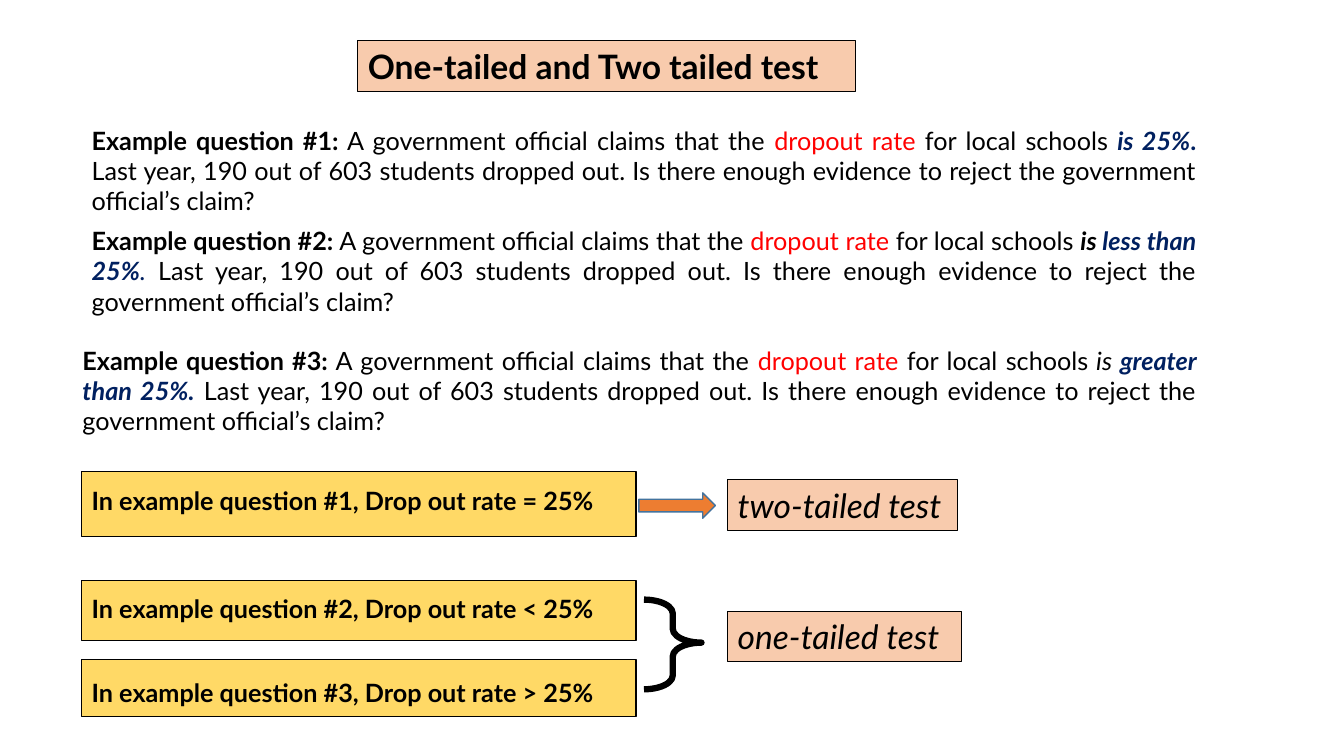
from pptx import Presentation
from pptx import util as u
from pptx.dml.color import RGBColor
from pptx.enum import shapes, text

BLACK, RED, NAVY = "000000", "FF0000", "002060"
YELLOW, PEACH, ORANGE, BLUE = "FFD966", "F8CBAD", "ED7D31", "43739E"


def rgb(value):
    return RGBColor.from_string(value)


class Deck:
    font = "Lato"

    def __init__(self, width, height):
        self.prs = Presentation()
        self.prs.slide_width, self.prs.slide_height = u.Cm(width), u.Cm(height)
        self.s = self.prs.slides.add_slide(self.prs.slide_layouts[6])

    def add_text(self, sp, runs, size, align=text.PP_ALIGN.LEFT, top=0.13):
        tf = sp.text_frame
        frame = dict(word_wrap=True, vertical_anchor=text.MSO_ANCHOR.TOP,
                     margin_top=u.Cm(top), margin_right=u.Cm(0.25))
        for name, value in frame.items():
            setattr(tf, name, value)
        p = tf.paragraphs[0]
        p.alignment = align
        for words, color, style in runs:
            r = p.add_run()
            r.text = words
            values = dict(name=self.font, size=u.Pt(size),
                          bold="b" in style, italic="i" in style)
            for name, value in values.items():
                setattr(r.font, name, value)
            r.font.color.rgb = rgb(color)

    def paragraph(self, box, runs):
        sp = self.s.shapes.add_textbox(*map(u.Cm, box))
        self.add_text(sp, runs, 18, text.PP_ALIGN.JUSTIFY)

    def shape(self, kind, box, fill=None, line=BLACK, width=0.75):
        sp = self.s.shapes.add_shape(kind, *map(u.Cm, box))
        sp.shadow.inherit = False
        if fill:
            sp.fill.solid()
            sp.fill.fore_color.rgb = rgb(fill)
        else:
            sp.fill.background()
        sp.line.color.rgb = rgb(line)
        sp.line.width = u.Pt(width)
        return sp

    def label(self, box, words, fill, size, style, top=0.13):
        sp = self.shape(shapes.MSO_SHAPE.RECTANGLE, box, fill)
        self.add_text(sp, [(words, BLACK, style)], size, top=top)


def main():
    deck = Deck(33.87, 19.05)

    # Title
    deck.label((9.02, 1.02, 12.55, 1.28), "One-tailed and Two tailed test", PEACH, 24, "b")

    # Example questions: each differs only in its claim
    question = ("Last year, 190 out of 603 students dropped out. Is there enough "
                "evidence to reject the government official’s claim?")
    examples = [
        (2.06, 3.02, [(" ", BLACK, ""), ("is 25%", NAVY, "bi"), (". ", NAVY, "b")], ""),
        (2.06, 5.55, [(" ", BLACK, ""), ("is ", BLACK, "bi"),
                      ("less than 25%", NAVY, "bi"), (".", NAVY, "i")], " "),
        (1.83, 8.56, [(" is ", BLACK, "i"), ("greater than 25%.", NAVY, "bi")], " "),
    ]
    right = 30.4
    for number, (left, top, claim, gap) in enumerate(examples, 1):
        runs = [(f"Example question #{number}:", BLACK, "b"),
                (" A government official claims that the ", BLACK, ""),
                ("dropout rate ", RED, ""),
                ("for local schools", BLACK, ""),
                *claim,
                (gap + question, BLACK, "")]
        deck.paragraph((left, top, right - left, 2.56), runs)

    # Hypotheses
    rates = [(11.89, 1.63, "=", 0.33), (14.63, 1.5, "<", 0.33), (16.61, 1.45, ">", 0.46)]
    for number, (top, height, sign, inset) in enumerate(rates, 1):
        deck.label((2.06, top, 13.97, height),
                   f"In example question #{number}, Drop out rate {sign} 25%",
                   YELLOW, 18, "b", inset)

    # Kinds of test
    deck.label((18.34, 12.09, 5.8, 1.28), "two-tailed test", PEACH, 24, "i")
    deck.label((18.34, 15.4, 5.9, 1.28), "one-tailed test", PEACH, 24, "i")

    # Arrow and brace
    deck.shape(shapes.MSO_SHAPE.RIGHT_ARROW, (16.1, 12.42, 1.93, 0.64), ORANGE, BLUE, 1)
    brace = deck.shape(shapes.MSO_SHAPE.RIGHT_BRACE, (16.23, 15.11, 1.45, 2.26), width=4.5)
    brace.adjustments[0], brace.adjustments[1] = 0.24, 0.48

    deck.prs.save("out.pptx")


if __name__ == "__main__":
    main()
